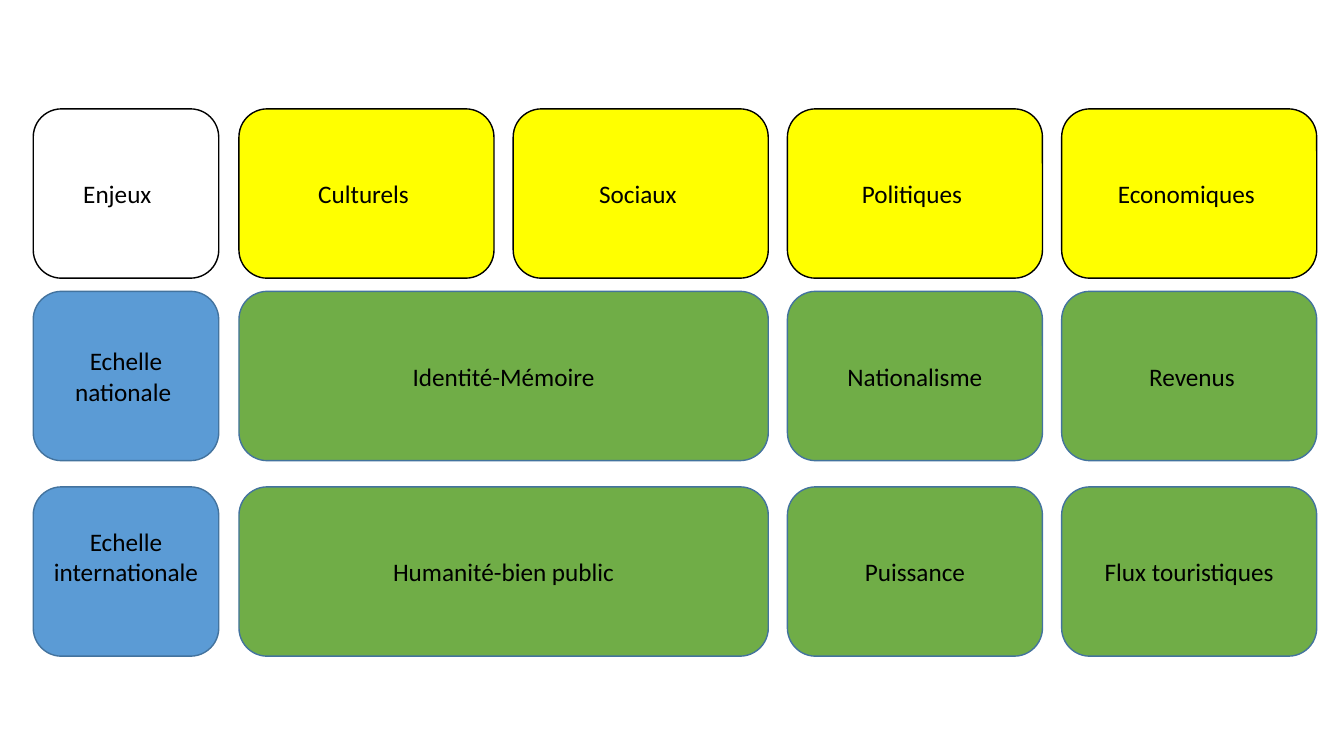
from dataclasses import dataclass

from pptx import Presentation
from pptx.dml.color import RGBColor
from pptx.enum import shapes, text
from pptx.slide import Slide
from pptx.util import Inches, Pt


@dataclass(frozen=True)
class Theme:
    font: str = "Calibri"
    size: float = 18
    line_width: float = 1
    ink: str = "000000"
    white: str = "FFFFFF"
    yellow: str = "FFFF00"
    green: str = "70AD47"
    blue: str = "5B9BD5"
    blue_line: str = "43739E"


@dataclass(frozen=True)
class Box:
    label: str
    row: int
    col: int
    fill: str
    line: str
    span: int = 1
    right_inset: float = 0.1
    bottom_inset: float = 0.05


THEME = Theme()
ROW_TOPS = (1.08, 2.89, 4.83)
ROW_HEIGHT = 1.68
LABEL_LEFT, LABEL_WIDTH = 0.33, 1.84
GRID_LEFT, COL_WIDTH, COL_STEP = 2.37, 2.53, 2.72

ISSUES = ("Culturels ", "Sociaux ", "Politiques ", "Economiques ")
SCALES = (
    (("Identité-Mémoire", 2), ("Nationalisme", 1), (" Revenus", 1)),
    (("Humanité-bien public", 2), ("Puissance", 1), ("Flux touristiques", 1)),
)


def build_boxes() -> list[Box]:
    boxes = [
        Box("Enjeux", 0, 0, THEME.white, THEME.ink, right_inset=0.27),
        Box("Echelle nationale ", 1, 0, THEME.blue, THEME.blue_line),
        Box("Echelle internationale", 2, 0, THEME.blue, THEME.blue_line,
            bottom_inset=0.35),
    ]
    for col, issue in enumerate(ISSUES, start=1):
        boxes.append(Box(issue, 0, col, THEME.yellow, THEME.ink))
    for row, cells in enumerate(SCALES, start=1):
        col = 1
        for label, span in cells:
            boxes.append(Box(label, row, col, THEME.green, THEME.blue_line, span))
            col += span
    return boxes


def draw_box(s: Slide, box: Box) -> None:
    left, width = LABEL_LEFT, LABEL_WIDTH
    if box.col:
        left = GRID_LEFT + (box.col - 1) * COL_STEP
        width = COL_WIDTH + (box.span - 1) * COL_STEP
    sp = s.shapes.add_shape(
        shapes.MSO_SHAPE.ROUNDED_RECTANGLE,
        Inches(left), Inches(ROW_TOPS[box.row]), Inches(width), Inches(ROW_HEIGHT),
    )
    sp.shadow.inherit = False
    sp.fill.solid()
    sp.fill.fore_color.rgb = RGBColor.from_string(box.fill)
    sp.line.color.rgb = RGBColor.from_string(box.line)
    sp.line.width = Pt(THEME.line_width)

    tf = sp.text_frame
    frame_format = {
        "word_wrap": True,
        "vertical_anchor": text.MSO_ANCHOR.MIDDLE,
        "margin_right": Inches(box.right_inset),
        "margin_bottom": Inches(box.bottom_inset),
    }
    for name, value in frame_format.items():
        setattr(tf, name, value)
    p = tf.paragraphs[0]
    p.alignment = text.PP_ALIGN.CENTER
    r = p.add_run()
    r.text = box.label
    for name, value in {"name": THEME.font, "size": Pt(THEME.size)}.items():
        setattr(r.font, name, value)
    r.font.color.rgb = RGBColor.from_string(THEME.ink)


def main() -> None:
    prs = Presentation()
    prs.slide_width, prs.slide_height = Inches(13.33), Inches(7.5)
    s = prs.slides.add_slide(prs.slide_layouts[6])
    for box in build_boxes():
        draw_box(s, box)
    prs.save("out.pptx")


if __name__ == "__main__":
    main()
